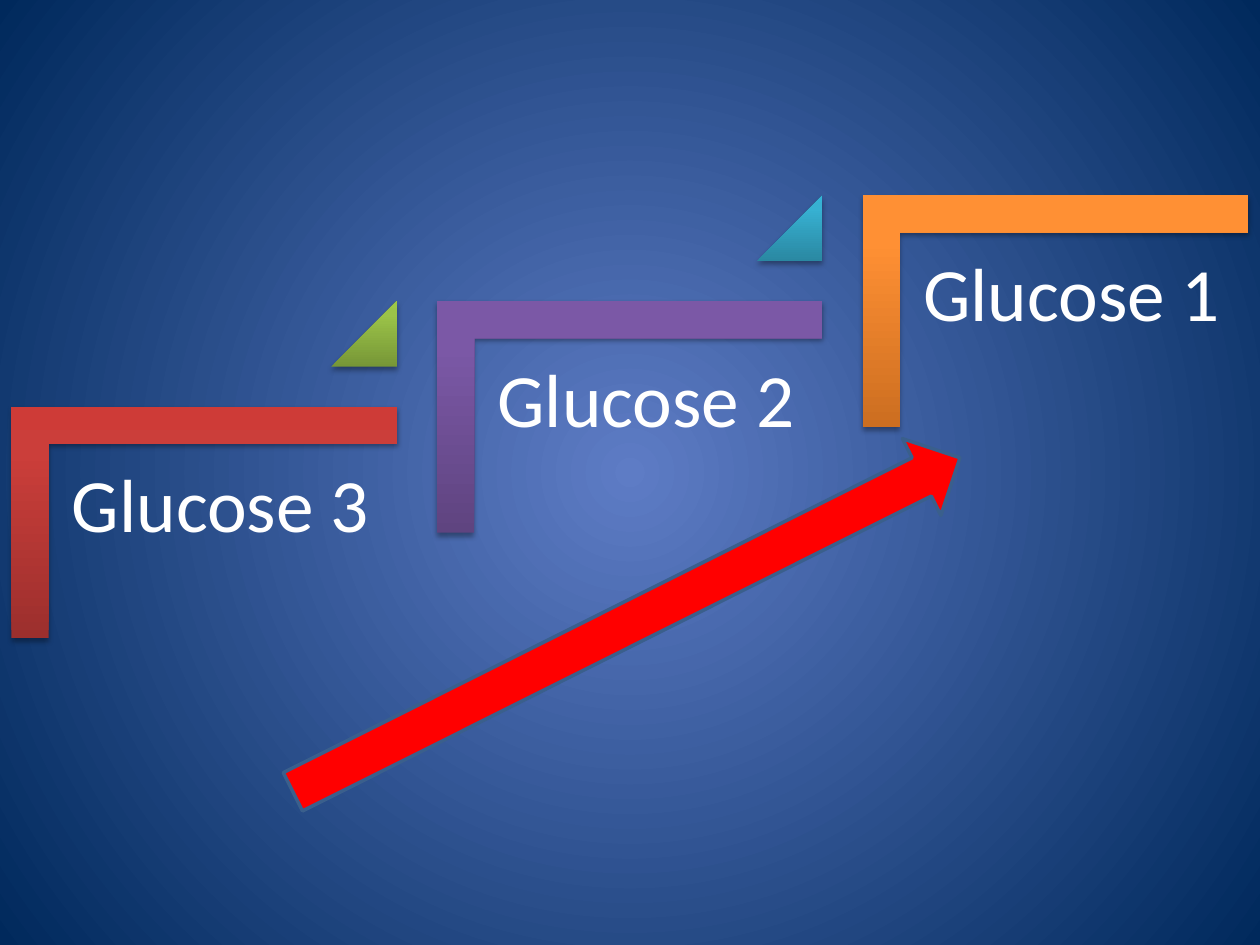
from dataclasses import dataclass

from lxml.etree import SubElement
from pptx import Presentation
from pptx.dml.color import RGBColor
from pptx.enum.shapes import MSO_SHAPE
from pptx.enum.text import MSO_ANCHOR, PP_ALIGN
from pptx.oxml.ns import qn
from pptx.shapes.autoshape import Shape
from pptx.slide import Slide
from pptx.util import Cm, Pt

COLORS = {
    "center": "5E7CC5", "edge": "00295C",
    "arrow": "FF0000", "arrow_line": "3A5F8C",
    "text": "FFFFFF", "shadow": "000000",
}
# Dark, middle and light tone of each gradient
TONES = {
    "red": ("9C2F2D", "CB3E3A", "CE3B37"),
    "green": ("779737", "9BC348", "9DC746"),
    "purple": ("5F4480", "7B58A6", "7C57A8"),
    "cyan": ("2A88A2", "37B1D2", "34B4D6"),
    "orange": ("CC6E20", "FF9034", "FF9136"),
}
TONE_STOPS = (0, 80, 100)
STEP_RIGHT, STEP_UP = 8.58, 2.13  # offset between stairs, in cm


@dataclass
class Stair:
    label: str
    corner: str
    triangle: str | None = None


STAIRS = [
    Stair("Glucose 3", "red", "green"),
    Stair("Glucose 2", "purple", "cyan"),
    Stair("Glucose 1", "orange"),
]


def add_color(parent, color: str):
    return SubElement(parent, qn("a:srgbClr"), val=color)


def swap_for_gradient(fill, stops: list[tuple[int, str]]):
    """Replace a fill element with a gradient and return the gradient."""
    parent = fill.getparent()
    gradient = SubElement(parent, qn("a:gradFill"), rotWithShape="0")
    parent.replace(fill, gradient)
    stop_list = SubElement(gradient, qn("a:gsLst"))
    for position, color in stops:
        add_color(SubElement(stop_list, qn("a:gs"), pos=str(position * 1000)), color)
    return gradient


def paint_background(page: Slide) -> None:
    page.background.fill.solid()
    fill = page.background._cSld.find(f".//{qn('a:solidFill')}")
    gradient = swap_for_gradient(fill, [(0, COLORS["center"]), (100, COLORS["edge"])])
    circle = SubElement(gradient, qn("a:path"), path="circle")
    SubElement(circle, qn("a:fillToRect"), l="50000", t="50000", r="50000", b="50000")


def style_part(shape: Shape, tone: str) -> None:
    """Give a stair part its vertical gradient and soft shadow."""
    shape.line.fill.background()
    shape.fill.background()
    properties = shape._element.spPr
    gradient = swap_for_gradient(properties.find(qn("a:noFill")),
                                 list(zip(TONE_STOPS, TONES[tone])))
    SubElement(gradient, qn("a:lin"), ang="16200000", scaled="0")
    shape.shadow.inherit = False
    shadow = SubElement(properties.find(qn("a:effectLst")), qn("a:outerShdw"),
                        blurRad=str(int(Pt(3.1))), dist=str(int(Pt(1.8))),
                        dir="5400000", rotWithShape="0")
    SubElement(add_color(shadow, COLORS["shadow"]), qn("a:alpha"), val="35000")


def add_label(page: Slide, text: str, left: float, top: float) -> None:
    box = page.shapes.add_textbox(Cm(left), Cm(top), Cm(7.01), Cm(6.15))
    frame = box.text_frame
    frame.word_wrap = True
    frame.vertical_anchor = MSO_ANCHOR.TOP
    frame.margin_left = frame.margin_right = Cm(0.46)
    frame.margin_top = frame.margin_bottom = Cm(0.46)
    para = frame.paragraphs[0]
    para.alignment = PP_ALIGN.LEFT
    para.line_spacing = 0.9
    para.space_after = Pt(15)
    span = para.add_run()
    span.text = text
    span.font.name = "Calibri"
    span.font.size = Pt(43)
    span.font.color.rgb = RGBColor.from_string(COLORS["text"])


def add_stair(page: Slide, stair: Stair, index: int) -> None:
    right, up = index * STEP_RIGHT, index * STEP_UP
    corner = page.shapes.add_shape(MSO_SHAPE.from_xml("corner"), Cm(1.78 + right),
                                   Cm(6.65 - up), Cm(4.67), Cm(7.77))
    corner.rotation = 90
    corner.adjustments[0] = corner.adjustments[1] = 0.16
    style_part(corner, stair.corner)
    add_label(page, stair.label, 0.99 + right, 8.97 - up)
    if stair.triangle:
        triangle = page.shapes.add_shape(MSO_SHAPE.ISOSCELES_TRIANGLE, Cm(6.68 + right),
                                         Cm(6.07 - up), Cm(1.32), Cm(1.32))
        triangle.adjustments[0] = 1
        style_part(triangle, stair.triangle)


def add_rising_arrow(page: Slide) -> None:
    arrow = page.shapes.add_shape(MSO_SHAPE.RIGHT_ARROW, Cm(5.11), Cm(11.73),
                                  Cm(15.04), Cm(1.73))
    arrow.rotation = 333.4
    arrow.shadow.inherit = False
    arrow.fill.solid()
    arrow.fill.fore_color.rgb = RGBColor.from_string(COLORS["arrow"])
    arrow.line.color.rgb = RGBColor.from_string(COLORS["arrow_line"])
    arrow.line.width = Pt(2)


def main() -> None:
    deck = Presentation()
    deck.slide_width, deck.slide_height = Cm(25.4), Cm(19.05)
    page = deck.slides.add_slide(deck.slide_layouts[6])
    paint_background(page)
    # Arrow lies behind the staircase
    add_rising_arrow(page)
    for index, stair in enumerate(STAIRS):
        add_stair(page, stair, index)
    deck.save("out.pptx")


if __name__ == "__main__":
    main()
